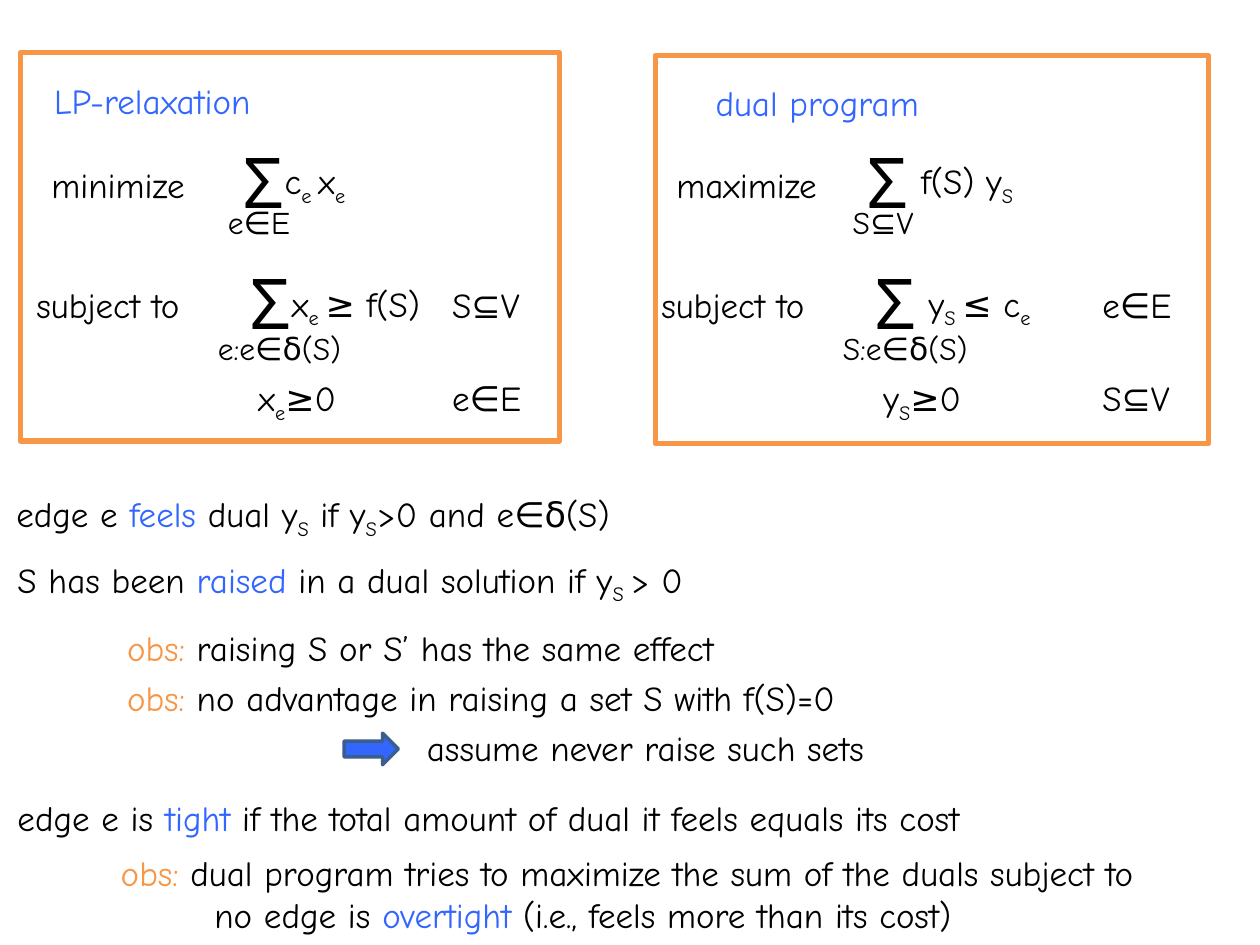
"""Build a slide that sets an LP relaxation beside its dual program."""
import pptx
import pptx.util
import pptx.dml.color
import pptx.enum.shapes
import pptx.enum.text

Pt = pptx.util.Pt
RGB = pptx.dml.color.RGBColor.from_string
Shape = pptx.enum.shapes.MSO_SHAPE
Fit = pptx.enum.text.MSO_AUTO_SIZE

hues = {"ink": "000000", "blue": "3366FF", "orange": "F79646", "edge": "3A5F8C"}
marks = {"*": "blue", "!": "orange", "_": "ink"}

deck = pptx.Presentation()
deck.slide_width, deck.slide_height = Pt(720), Pt(540)
slide = deck.slides.add_slide(deck.slide_layouts[6])


def write(left, top, width, lines, size=20, indent=0):
    high = {18: 29, 20: 31.7, 40: 55.4}[size] + 24 * (len(lines) - 1)
    box = slide.shapes.add_textbox(Pt(left), Pt(top), Pt(width), Pt(high))
    frame = box.text_frame
    frame.word_wrap = True
    frame.auto_size = Fit.SHAPE_TO_FIT_TEXT
    for row, line in enumerate(lines):
        para = frame.add_paragraph() if row else frame.paragraphs[0]
        if row:
            para._p.get_or_add_pPr().set("marL", str(Pt(indent)))
        for piece in line.split("|"):
            mark = piece[0]
            run = para.add_run()
            run.text = piece[1:] if mark in marks else piece
            run.font.name = "Comic Neue"
            run.font.size = Pt(size)
            run.font.color.rgb = RGB(hues[marks.get(mark, "ink")])
            if mark == "_":
                run.font._element.set("baseline", "-25000")


def draw(kind, left, top, width, height, fill, line, thick):
    shape = slide.shapes.add_shape(kind, Pt(left), Pt(top), Pt(width), Pt(height))
    shape.shadow.inherit = False
    if fill:
        shape.fill.solid()
        shape.fill.fore_color.rgb = RGB(hues[fill])
    else:
        shape.fill.background()
    shape.line.color.rgb = RGB(hues[line])
    shape.line.width = Pt(thick)


slots = [
    (13.7, 158.4, 117, 20),
    (22.3, 90, 109, 20),
    (131.8, 75.6, 40, 40),
    (123.1, 112.3, 57, 18),
    (155.5, 87.8, 90, 20),
    (136.1, 144.7, 40, 40),
    (117.4, 184.3, 95, 18),
    (159.8, 157.7, 102, 20),
    (133.9, 211.7, 104, 20),
]
primal = ["subject to", "minimize", "Σ", "e∈E", "c|_e |x|_e", "Σ",
          "e:e∈δ(S)", "x|_e |≥ f(S)", " x|_e|≥0"]
dual = ["subject to", "maximize", "Σ", "S⊆V", " f(S) y|_S", "Σ",
        "S:e∈δ(S)", " y|_S |≤ c|_e", " y|_S|≥0"]

for shift, terms, side, sets in [
    (0, primal, 251.3, ["S⊆V", "e∈E"]),
    (357.1, dual, 622.8, ["e∈E", "S⊆V"]),
]:
    for (left, top, width, size), term in zip(slots, terms):
        write(left + shift, top, width, [term], size)
    for top, term in zip([158.4, 211.7], sets):
        write(side, top, 83, [term])

write(23.8, 41.8, 152, ["*LP-relaxation"])
write(401.8, 43.2, 152, ["*dual program"])
draw(Shape.RECTANGLE, 11.5, 30.2, 308.2, 221.8, None, "orange", 3)
draw(Shape.RECTANGLE, 374.4, 31.7, 316.1, 221.8, None, "orange", 3)
draw(Shape.RIGHT_ARROW, 196.6, 419, 31, 18, "blue", "edge", 2)

notes = [
    (2.2, 277.9, 711, ["edge e |*feels| dual y|_S| if y|_S|>0 and e∈δ(S)"]),
    (2.9, 315.4, 711, ["S has been |*raised| in a dual solution if y|_S |> 0"]),
    (65.5, 354.2, 635, ["!obs:| raising S or S’ has the same effect"]),
    (65.5, 383, 635, ["!obs:| no advantage in raising a set S with f(S)=0"]),
    (236.9, 411.8, 293, ["assume never raise such sets"]),
    (2.9, 451.4, 711,
     ["edge e is |*tight| if the total amount of dual it feels equals its cost"]),
    (61.9, 483.1, 652,
     ["!obs:| dual program tries to maximize the sum of the duals subject to",
      "no edge is |*overtight| (i.e., feels more than its cost)"]),
]
for left, top, width, lines in notes:
    write(left, top, width, lines, indent=53.5)

deck.save("out.pptx")
